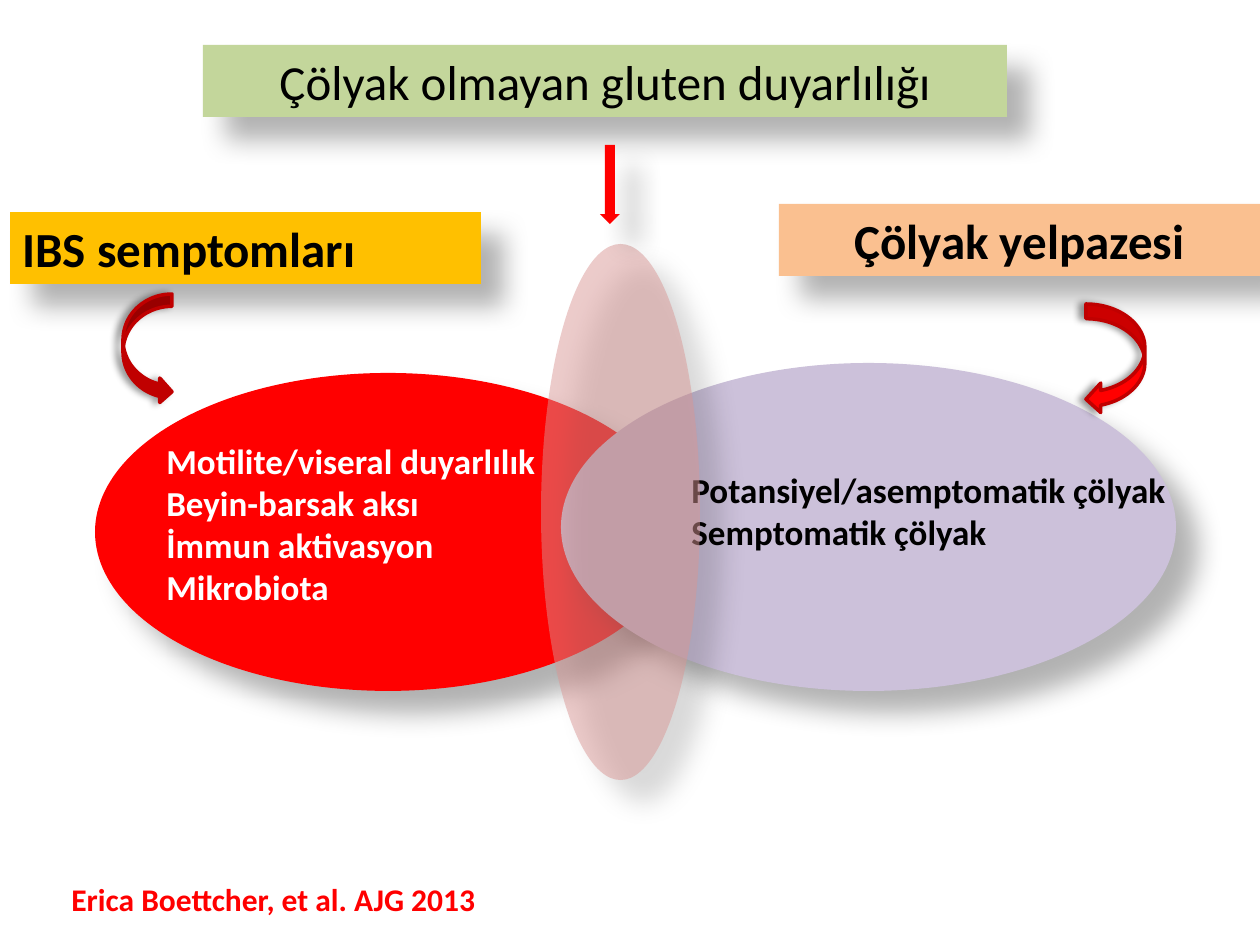
from dataclasses import dataclass
from typing import Optional

from lxml import etree
from pptx import Presentation
from pptx import util as u
from pptx.dml.color import RGBColor
from pptx.enum import shapes, text
from pptx.oxml.ns import qn

PX = 914400 / 126  # EMU in one px
FONT = "Calibri"

BLACK = RGBColor(0x00, 0x00, 0x00)
WHITE = RGBColor(0xFF, 0xFF, 0xFF)
RED = RGBColor(0xFF, 0x00, 0x00)
DARK_RED = RGBColor(0xC0, 0x00, 0x00)
GREEN = RGBColor(0xC3, 0xD6, 0x9B)
AMBER = RGBColor(0xFF, 0xC0, 0x00)
PEACH = RGBColor(0xFA, 0xC0, 0x90)
LILAC = RGBColor(0xCC, 0xC1, 0xDA)
ROSE = RGBColor(0xD9, 0x96, 0x94)

LEFT, CENTER = text.PP_ALIGN.LEFT, text.PP_ALIGN.CENTER
KIND = shapes.MSO_SHAPE


@dataclass(frozen=True)
class Shadow:
    opacity: int  # percent
    blur: int  # points
    distance: int  # points
    angle: int  # degrees


SOFT = Shadow(30, 15, 18, 45)
TIGHT = Shadow(40, 4, 3, 180)


@dataclass(frozen=True)
class Wording:
    lines: list[str]
    size: int
    color: RGBColor = BLACK
    bold: bool = True
    align: text.PP_ALIGN = LEFT


@dataclass(frozen=True)
class Figure:
    kind: shapes.MSO_SHAPE
    at: tuple[int, int, int, int]  # left, top, width, height in px
    fill: RGBColor
    shadow: Shadow = SOFT
    line: Optional[RGBColor] = None
    opacity: int = 100
    wording: Optional[Wording] = None


@dataclass(frozen=True)
class Note:
    at: tuple[int, int, int, int]
    wording: Wording


def emu(at: tuple[int, int, int, int]) -> list[int]:
    return [u.Emu(round(length * PX)) for length in at]


def set_alpha(color_element, percent: int) -> None:
    etree.SubElement(color_element, qn("a:alpha"), val=str(percent * 1000))


def cast_shadow(shape, shadow: Shadow) -> None:
    shape.shadow.inherit = False
    effects = shape._element.spPr.find(qn("a:effectLst"))
    outer = etree.SubElement(
        effects, qn("a:outerShdw"), blurRad=str(int(u.Pt(shadow.blur))),
        dist=str(int(u.Pt(shadow.distance))), dir=str(shadow.angle * 60000),
        algn="tl", rotWithShape="0")
    color = etree.SubElement(outer, qn("a:srgbClr"), val=str(BLACK))
    set_alpha(color, shadow.opacity)


def paint(shape, figure: Figure) -> None:
    shape.fill.solid()
    shape.fill.fore_color.rgb = figure.fill
    if figure.opacity < 100:
        color = shape._element.spPr.find(qn("a:solidFill"))[0]
        set_alpha(color, figure.opacity)
    if figure.line is None:
        shape.line.fill.background()
    else:
        shape.line.color.rgb = figure.line
        shape.line.width = u.Pt(2)
    cast_shadow(shape, figure.shadow)


def write(shape, wording: Wording) -> None:
    frame = shape.text_frame
    frame.word_wrap = True
    frame.auto_size = text.MSO_AUTO_SIZE.NONE
    frame.vertical_anchor = text.MSO_ANCHOR.TOP
    frame.text = "\n".join(wording.lines)
    for para in frame.paragraphs:
        para.alignment = wording.align
        para.font.name = FONT
        para.font.size = u.Pt(wording.size)
        para.font.bold = wording.bold
        para.font.color.rgb = wording.color


def draw_figure(page, figure: Figure) -> None:
    shape = page.shapes.add_shape(figure.kind, *emu(figure.at))
    paint(shape, figure)
    if figure.wording:
        write(shape, figure.wording)


def draw_note(page, note: Note) -> None:
    write(page.shapes.add_textbox(*emu(note.at)), note.wording)


def draw_title(page, figure: Figure) -> None:
    title = page.shapes.title
    title.left, title.top, title.width, title.height = emu(figure.at)
    paint(title, figure)
    write(title, figure.wording)


TITLE = Figure(KIND.RECTANGLE, (203, 45, 804, 72), GREEN, wording=Wording(
    ["Çölyak olmayan gluten duyarlılığı"], 28, bold=False, align=CENTER))

# Back to front
PARTS = [
    Note((59, 874, 610, 50), Wording(["Erica Boettcher, et al. AJG 2013"], 18, RED)),
    # IBS side
    Figure(KIND.OVAL, (95, 373, 586, 318), RED),
    Note((154, 433, 397, 183), Wording(
        ["Motilite/viseral duyarlılık", "Beyin-barsak aksı",
         "İmmun aktivasyon", "Mikrobiota"], 20, WHITE)),
    Figure(KIND.RECTANGLE, (10, 212, 471, 72), AMBER,
           wording=Wording(["IBS semptomları"], 28)),
    Figure(KIND.CURVED_RIGHT_ARROW, (123, 294, 49, 110), DARK_RED, TIGHT, DARK_RED),
    # Coeliac side
    Figure(KIND.OVAL, (561, 363, 615, 328), LILAC),
    Note((679, 462, 546, 97), Wording(
        ["Potansiyel/asemptomatik çölyak", "Semptomatik çölyak"], 20)),
    Figure(KIND.RECTANGLE, (779, 204, 481, 72), PEACH,
           wording=Wording(["Çölyak yelpazesi"], 28, align=CENTER)),
    # Overlap and arrows
    Figure(KIND.OVAL, (541, 244, 159, 536), ROSE, opacity=49),
    Figure(KIND.CURVED_LEFT_ARROW, (1086, 304, 59, 110), RED, TIGHT, DARK_RED),
    Figure(KIND.DOWN_ARROW, (600, 145, 20, 79), RED),
]


def main() -> None:
    deck = Presentation()
    deck.slide_width, deck.slide_height = u.Inches(10), u.Inches(7.5)
    page = deck.slides.add_slide(deck.slide_layouts.get_by_name("Title Only"))
    draw_title(page, TITLE)
    for part in PARTS:
        if isinstance(part, Note):
            draw_note(page, part)
        else:
            draw_figure(page, part)
    deck.save("out.pptx")


if __name__ == "__main__":
    main()
